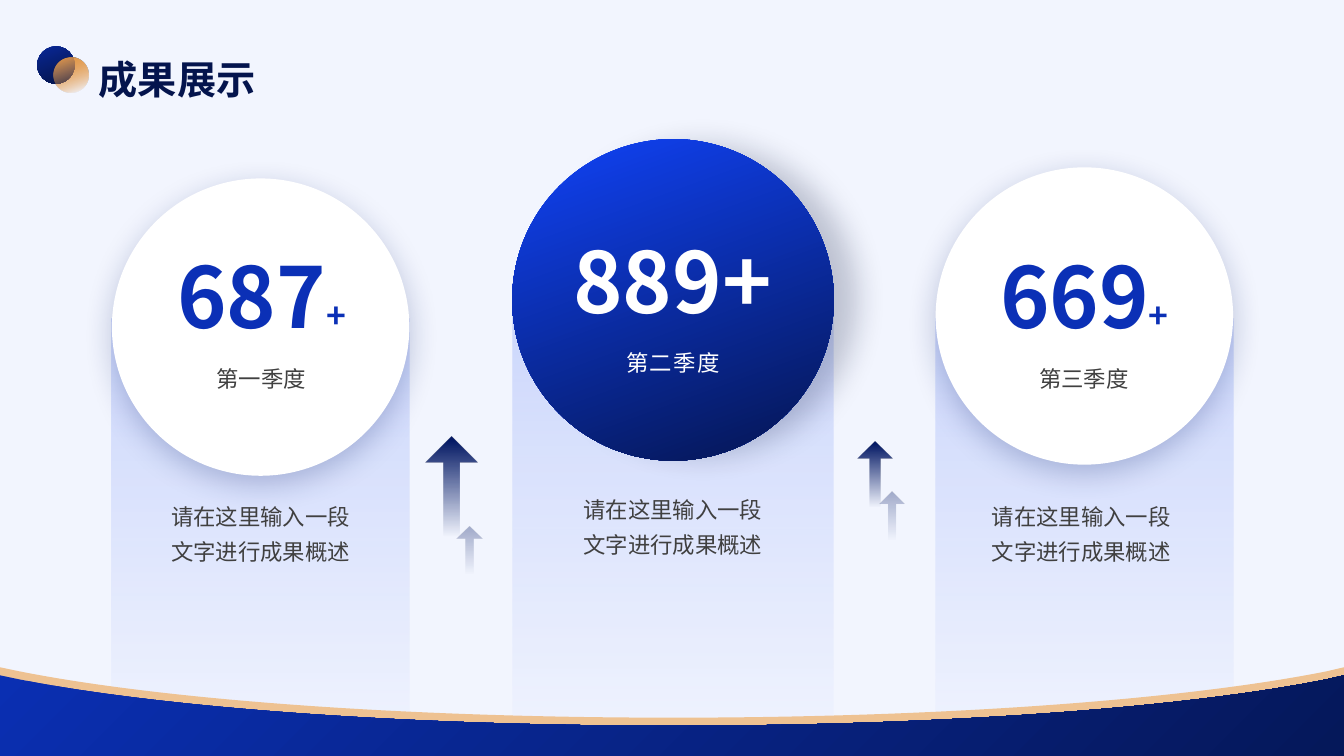
from dataclasses import dataclass

import pptx
import pptx.dml.color
import pptx.enum.shapes
import pptx.enum.text
import pptx.oxml
import pptx.oxml.ns
import pptx.util

Inches = pptx.util.Inches
Pt = pptx.util.Pt
qn = pptx.oxml.ns.qn
SHAPE = pptx.enum.shapes.MSO_SHAPE
ALIGN = pptx.enum.text.PP_ALIGN


@dataclass(frozen=True)
class Theme:
    font: str = "Noto Sans CJK SC"
    white: str = "FFFFFF"
    title: str = "04144D"
    number: str = "0B30B6"
    body: str = "404040"
    panel: str = "B3C3FB"
    arrow: str = "061B66"
    gold: str = "EEC292"
    badge_gold: str = "E39949"
    badge_blue: tuple = ("092794", "041346")
    disc_blue: tuple = ("1041F1", "051758")
    wave_blue: tuple = ("0A2FB2", "051758")
    # colour, opacity, distance, direction, scale
    disc_shadow: tuple = ("061B66", 24, 6, 90, 100)
    main_shadow: tuple = ("030D33", 22, 21, 0, 96)
    title_size: int = 28
    number_size: int = 60
    plus_size: int = 24
    body_size: int = 16


def color(code):
    return pptx.dml.color.RGBColor.from_string(code)


def drawing_xml(markup):
    """Parse markup whose root tag has at least one attribute."""
    space = 'xmlns:a="http://schemas.openxmlformats.org/drawingml/2006/main"'
    return pptx.oxml.parse_xml(markup.replace(" ", f" {space} ", 1))


class SlideBuilder:
    def __init__(self, page, theme):
        self.page = page
        self.theme = theme

    def paint(self, shape, fill, angle=90):
        """Fill with one colour, or with (position, colour, opacity) stops."""
        shape.shadow.inherit = False
        shape.line.fill.background()
        if isinstance(fill, str):
            shape.fill.solid()
            shape.fill.fore_color.rgb = color(fill)
            return
        shape.fill.background()
        stops = "".join(
            f'<a:gs pos="{position * 1000}"><a:srgbClr val="{code}">'
            f'<a:alpha val="{opacity * 1000}"/></a:srgbClr></a:gs>'
            for position, code, opacity in fill)
        gradient = drawing_xml(
            f'<a:gradFill rotWithShape="1"><a:gsLst>{stops}</a:gsLst>'
            f'<a:lin ang="{angle * 60000}" scaled="0"/></a:gradFill>')
        properties = shape.element.spPr
        properties.replace(properties.find(qn("a:noFill")), gradient)

    def shape(self, kind, left, top, width, height, fill, angle=90, adjust=()):
        shape = self.page.shapes.add_shape(
            kind, Inches(left), Inches(top), Inches(width), Inches(height))
        for index, value in enumerate(adjust):
            shape.adjustments[index] = value
        self.paint(shape, fill, angle)
        return shape

    def backdrop(self, opacity):
        tint = self.shape(SHAPE.RECTANGLE, 0, 0, 13.33, 7.5, self.theme.panel)
        tone = tint.element.spPr.find(qn("a:solidFill"))[0]
        tone.append(drawing_xml(f'<a:alpha val="{opacity * 1000}"/>'))

    def panel(self, left, top, width, height):
        code = self.theme.panel
        panel = self.shape(SHAPE.ROUND_2_SAME_RECTANGLE, left, top, width, height,
                           [(5, code, 0), (100, code, 60)], adjust=(0, 0))
        panel.rotation = 180

    def disc(self, left, top, size, fill, shadow):
        disc = self.shape(SHAPE.OVAL, left, top, size, size, fill, 70)
        code, opacity, distance, direction, scale = shadow
        disc.element.spPr.find(qn("a:effectLst")).append(drawing_xml(
            f'<a:outerShdw blurRad="{Pt(22)}" dist="{Pt(distance)}" '
            f'dir="{direction * 60000}" sx="{scale * 1000}" sy="{scale * 1000}" '
            f'algn="ctr" rotWithShape="0"><a:srgbClr val="{code}">'
            f'<a:alpha val="{opacity * 1000}"/></a:srgbClr></a:outerShdw>'))

    def arrow(self, left, top, width, height, opacity):
        code = self.theme.arrow
        self.shape(SHAPE.UP_ARROW, left, top, width, height,
                   [(4, code, opacity), (95, code, 0)], adjust=(0.315, 0.5))

    def wave(self, top, fill, angle=45):
        """Draw a band whose upper edge sags along two Bezier curves."""
        corners = [(0.19, 0.04), (6.68, 0.5), (13.16, 0.04),
                   (13.33, 0), (13.33, 1.04), (0, 1.04)]
        outline = self.page.shapes.build_freeform(0, Inches(top))
        outline.add_line_segments(
            [(Inches(x), Inches(top + y)) for x, y in corners], close=True)
        band = outline.convert_to_shape()
        # Bend the two straight segments that meet at the lowest point
        edges = list(band.element.iter(qn("a:lnTo")))
        bends = [[(1.6, 0.32), (3.98, 0.5), (6.68, 0.5)],
                 [(9.38, 0.5), (11.76, 0.32), (13.16, 0.04)]]
        for edge, bend in zip(edges[1:3], bends):
            curve = edge.makeelement(qn("a:cubicBezTo"), {})
            for x, y in bend:
                curve.append(drawing_xml(f'<a:pt x="{Inches(x)}" y="{Inches(y)}"/>'))
            edge.getparent().replace(edge, curve)
        self.paint(band, fill, angle)

    def text(self, left, top, width, height, spans, code, bold=False, wrap=True,
             align=ALIGN.CENTER, line_spacing=None, space_before=None, tracking=0):
        """Write one paragraph from (words, size) spans."""
        box = self.page.shapes.add_textbox(
            Inches(left), Inches(top), Inches(width), Inches(height))
        frame = box.text_frame
        frame.word_wrap = wrap
        frame.margin_left = frame.margin_right = 0
        frame.margin_top = frame.margin_bottom = 0
        para = frame.paragraphs[0]
        para.alignment = align
        para.line_spacing = line_spacing
        para.space_before = space_before
        para.font.name = self.theme.font
        para.font.bold = bold
        para.font.color.rgb = color(code)
        for words, size in spans:
            span = para.add_run()
            span.text = words
            span.font.size = Pt(size)
        if tracking:
            for properties in box.element.iter(qn("a:rPr")):
                properties.set("spc", str(tracking * 100))
        # East Asian characters take their own typeface entry
        for defaults in box.element.iter(qn("a:defRPr")):
            defaults.append(drawing_xml(f'<a:ea typeface="{self.theme.font}"/>'))

    def body(self, left, top, width, height, words, code, **options):
        self.text(left, top, width, height, [(words, self.theme.body_size)], code,
                  line_spacing=1.3, **options)


def main():
    theme = Theme()
    deck = pptx.Presentation()
    deck.slide_width, deck.slide_height = Inches(13.33), Inches(7.5)
    page = deck.slides.add_slide(deck.slide_layouts[6])
    builder = SlideBuilder(page, theme)

    # Backdrop
    builder.backdrop(16)

    # Column panels
    for left, top, width in [(9.28, 3.16, 2.95), (5.08, 2.94, 3.19), (1.11, 3.16, 2.95)]:
        builder.panel(left, top, width, 7.74 - top)

    # Title badge, in two layers for a denser gold
    start, end = theme.badge_blue
    for layer in range(2):
        builder.shape(SHAPE.OVAL, 0.37, 0.46, 0.37, 0.37,
                      [(4, start, 100), (100, end, 100)], 70)
        builder.shape(SHAPE.OVAL, 0.53, 0.57, 0.35, 0.35,
                      [(4, theme.badge_gold, 100), (95, theme.badge_gold, 0)], 70)

    # Discs
    start, end = theme.disc_blue
    builder.disc(5.08, 1.38, 3.19, [(4, start, 100), (95, end, 100)], theme.main_shadow)
    for left, top in [(9.28, 1.66), (1.11, 1.77)]:
        builder.disc(left, top, 2.95, theme.white, theme.disc_shadow)

    # Numbers and quarter names
    builder.text(5.62, 2.28, 2.1, 1.01, [("889+", theme.number_size)], theme.white,
                 bold=True, wrap=False)
    builder.body(5.96, 3.38, 1.43, 0.33, "第二季度", theme.white, wrap=False, tracking=1)
    for left, number, quarter in [(1.29, "687", "第一季度"), (9.45, "669", "第三季度")]:
        builder.text(left, 2.43, 2.61, 1.01,
                     [(number, theme.number_size), ("+", theme.plus_size)],
                     theme.number, bold=True)
        builder.body(left + 0.51, 3.54, 1.58, 0.33, quarter, theme.body)

    # Summaries
    for left, top in [(1.6, 4.91), (9.74, 4.91), (5.69, 4.84)]:
        builder.body(left, top, 1.97, 0.68, "请在这里输入一段文字进行成果概述", theme.body)

    # Growth arrows
    for left, top, width, opacity in [(8.51, 4.38, 0.34, 100), (8.72, 4.88, 0.25, 33),
                                      (4.22, 4.33, 0.52, 100), (4.53, 5.22, 0.25, 33)]:
        builder.arrow(left, top, width, 2 * width, opacity)

    # Bottom waves
    start, end = theme.wave_blue
    builder.wave(6.62, theme.gold)
    builder.wave(6.7, [(0, start, 100), (100, end, 100)])

    # Title
    builder.text(0.98, 0.55, 5.14, 0.41, [("成果展示", theme.title_size)], theme.title,
                 bold=True, align=ALIGN.LEFT, space_before=Pt(10))

    deck.save("out.pptx")


if __name__ == "__main__":
    main()
